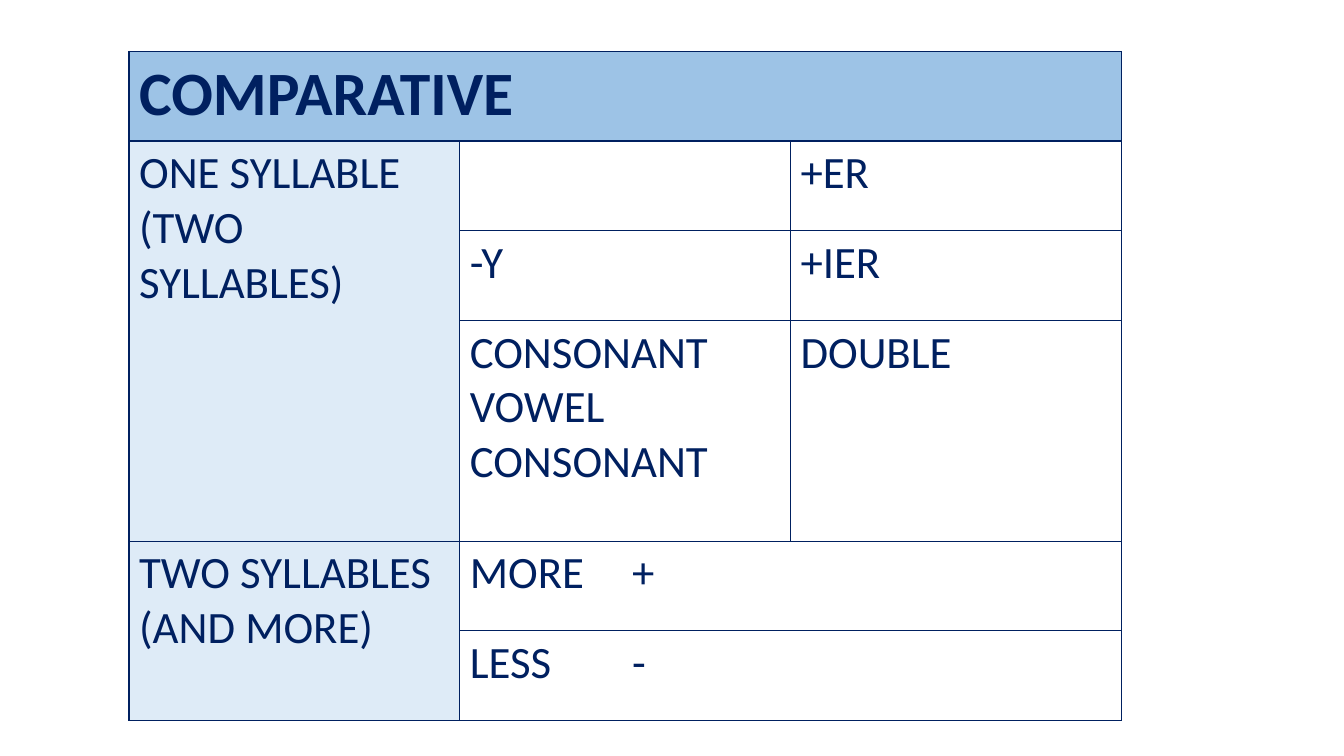
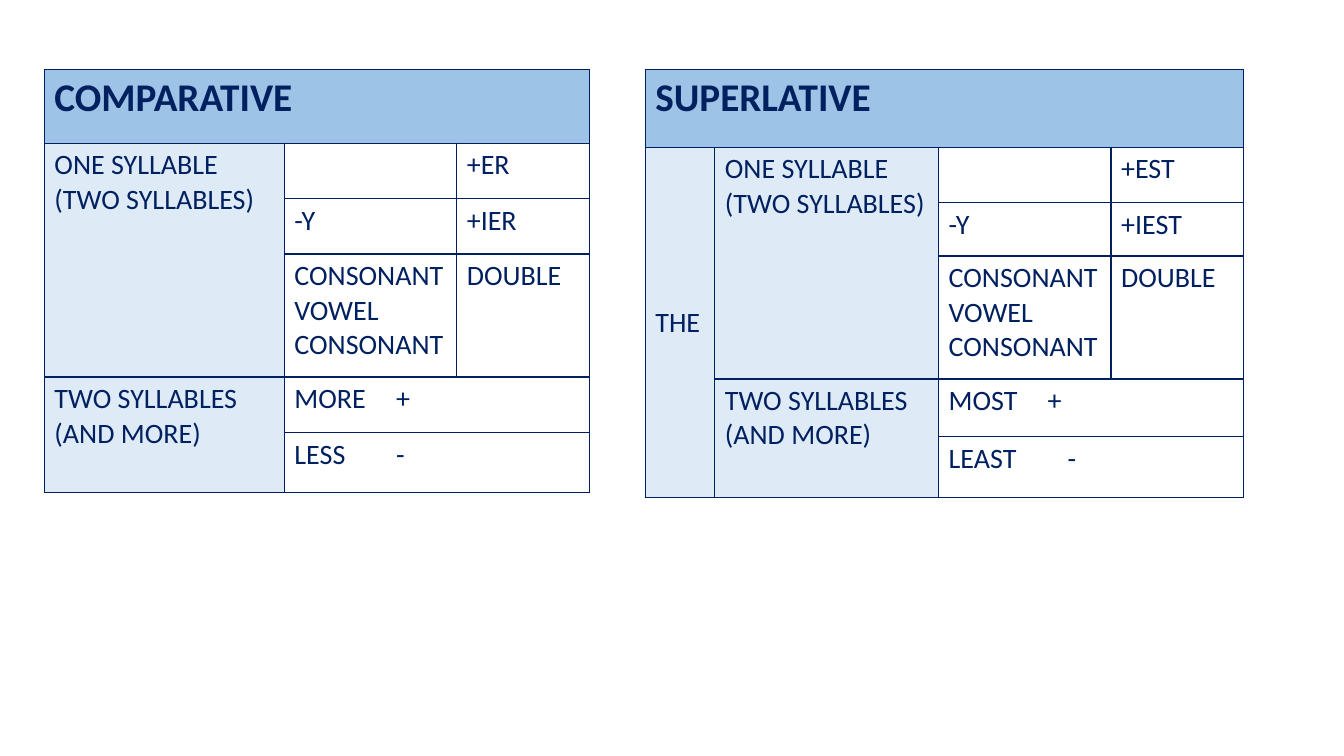
import lxml.etree
import pptx
import pptx.dml.color
import pptx.enum.text
import pptx.oxml.ns
import pptx.util

Inches = pptx.util.Inches
Pt = pptx.util.Pt
RGBColor = pptx.dml.color.RGBColor
Anchor = pptx.enum.text.MSO_ANCHOR
qn = pptx.oxml.ns.qn

NAVY = RGBColor(0x00, 0x20, 0x60)
HEADER_BLUE = RGBColor(0x9D, 0xC3, 0xE6)
PALE_BLUE = RGBColor(0xDE, 0xEB, 0xF7)
WHITE = RGBColor(0xFF, 0xFF, 0xFF)

FONT = "Calibri"
BORDER = Pt(1)
ONE_SYLLABLE = "ONE SYLLABLE\n(TWO SYLLABLES)"
TWO_SYLLABLES = "TWO SYLLABLES\n(AND MORE)"
PATTERN = "CONSONANT\nVOWEL\nCONSONANT"

COMPARATIVE = {
    "title": "COMPARATIVE",
    "article": None,
    "endings": ("+ER", "+IER"),
    "degrees": ("MORE\t+", "LESS\t-"),
}
SUPERLATIVE = {
    "title": "SUPERLATIVE",
    "article": "THE",
    "endings": ("+EST", "+IEST"),
    "degrees": ("MOST\t+", "LEAST\t-"),
}


def set_borders(cell):
    properties = cell._tc.get_or_add_tcPr()
    for side in ("a:lnL", "a:lnR", "a:lnT", "a:lnB"):
        line = lxml.etree.SubElement(properties, qn(side), w=str(BORDER))
        fill = lxml.etree.SubElement(line, qn("a:solidFill"))
        lxml.etree.SubElement(fill, qn("a:srgbClr"), val=str(NAVY))


def set_tab(para, position):
    properties = para._p.get_or_add_pPr()
    tabs = lxml.etree.SubElement(properties, qn("a:tabLst"))
    lxml.etree.SubElement(tabs, qn("a:tab"), pos=str(Inches(position)), algn="l")


def write_cell(cell, text, size, bold=False, tab=None):
    formats = {"name": FONT, "size": Pt(size), "bold": bold}
    lines = text.split("\n")
    frame = cell.text_frame
    for index, line in enumerate(lines):
        para = frame.paragraphs[0] if index == 0 else frame.add_paragraph()
        if tab is not None:
            set_tab(para, tab)
        span = para.add_run()
        span.text = line
        for name, value in formats.items():
            setattr(span.font, name, value)
        span.font.color.rgb = NAVY


def add_rule_table(page, rules, left, top, widths, heights, sizes, tabs):
    frame = page.shapes.add_table(
        len(heights), len(widths), Inches(left), Inches(top),
        Inches(sum(widths)), Inches(sum(heights)))
    table = frame.table
    for flag in ("first_row", "horz_banding"):
        setattr(table, flag, False)
    for column, width in zip(table.columns, widths):
        column.width = Inches(width)
    for row, height in zip(table.rows, heights):
        row.height = Inches(height)

    last = len(widths) - 1
    group = last - 2
    for row_index in range(len(heights)):
        for column_index in range(len(widths)):
            cell = table.cell(row_index, column_index)
            set_borders(cell)
            cell.fill.solid()
            if row_index == 0:
                cell.fill.fore_color.rgb = HEADER_BLUE
            else:
                cell.fill.fore_color.rgb = PALE_BLUE if column_index <= group else WHITE

    merges = [
        (0, 0, 0, last),
        (1, group, 3, group),
        (4, group, 5, group),
        (4, group + 1, 4, last),
        (5, group + 1, 5, last),
    ]
    if rules["article"]:
        merges.append((1, 0, 5, 0))
    for first_row, first_column, end_row, end_column in merges:
        table.cell(first_row, first_column).merge(table.cell(end_row, end_column))

    title_size, body_size = sizes
    write_cell(table.cell(0, 0), rules["title"], title_size, bold=True)
    plain, with_y = rules["endings"]
    texts = {
        (1, group): ONE_SYLLABLE,
        (1, last): plain,
        (2, group + 1): "-Y",
        (2, last): with_y,
        (3, group + 1): PATTERN,
        (3, last): "DOUBLE",
        (4, group): TWO_SYLLABLES,
    }
    for (row_index, column_index), text in texts.items():
        write_cell(table.cell(row_index, column_index), text, body_size)
    for row_index, (text, tab) in enumerate(zip(rules["degrees"], tabs), start=4):
        write_cell(table.cell(row_index, group + 1), text, body_size, tab=tab)
    if rules["article"]:
        article = table.cell(1, 0)
        write_cell(article, rules["article"], body_size)
        article.vertical_anchor = Anchor.MIDDLE


def build_comparative_page(page):
    add_rule_table(
        page, COMPARATIVE, 1.28, 0.51, [3.28] * 3,
        [0.89, 0.89, 0.89, 2.19, 0.89, 0.89], (44, 32), (1.61, 1.61))


def build_overview_page(page):
    top, sizes = 0.69, (28, 20)
    add_rule_table(
        page, COMPARATIVE, 0.44, top, [2.38, 1.71, 1.32],
        [0.73, 0.55, 0.55, 1.22, 0.55, 0.6], sizes, (1.01, 1.01))
    add_rule_table(
        page, SUPERLATIVE, 6.4, top, [0.69, 2.22, 1.71, 1.31],
        [0.77, 0.55, 0.53, 1.22, 0.57, 0.61], sizes, (0.98, 1.18))


def main():
    deck = pptx.Presentation()
    deck.slide_width = Inches(13.33)
    deck.slide_height = Inches(7.5)
    blank = deck.slide_layouts[6]
    for build in (build_comparative_page, build_overview_page):
        build(deck.slides.add_slide(blank))
    deck.save("out.pptx")


if __name__ == "__main__":
    main()
